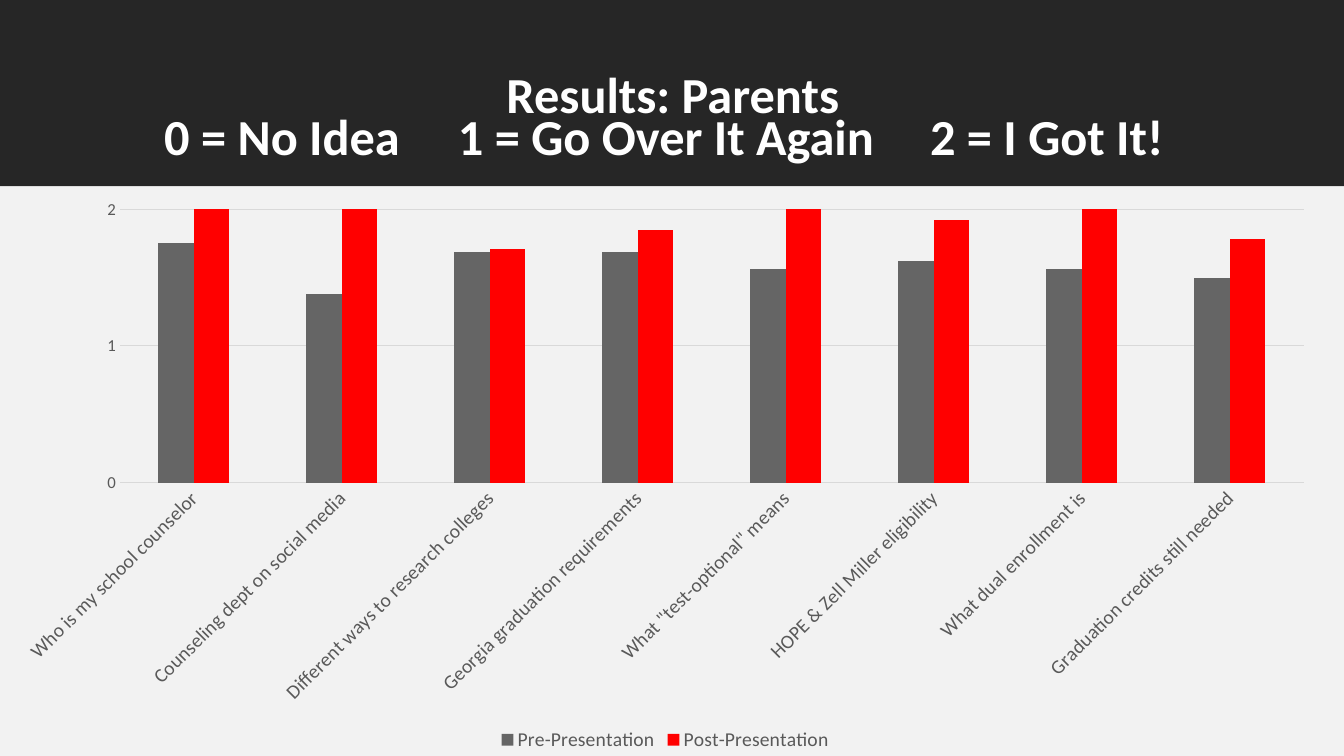
from dataclasses import dataclass

from lxml.etree import SubElement
from pptx import Presentation
from pptx.chart.chart import Chart
from pptx.chart.data import CategoryChartData
from pptx.dml.color import RGBColor
from pptx.enum.chart import XL_CHART_TYPE, XL_LEGEND_POSITION, XL_TICK_MARK
from pptx.enum.shapes import MSO_SHAPE
from pptx.enum.text import MSO_ANCHOR, PP_ALIGN
from pptx.oxml import parse_xml
from pptx.oxml.ns import nsdecls, qn
from pptx.slide import Slide
from pptx.text.text import Font
from pptx.util import Cm, Length, Pt

CHARCOAL = RGBColor(0x26, 0x26, 0x26)
PALE_GRAY = RGBColor(0xF2, 0xF2, 0xF2)
WHITE = RGBColor(0xFF, 0xFF, 0xFF)
LABEL_GRAY = RGBColor(0x59, 0x59, 0x59)
GRID_GRAY = RGBColor(0xD9, 0xD9, 0xD9)
BAR_GRAY = RGBColor(0x65, 0x65, 0x65)
BAR_RED = RGBColor(0xFF, 0x00, 0x00)

FONT_NAME = "Calibri"
SLIDE_WIDTH = Cm(33.87)
SLIDE_HEIGHT = Cm(19.05)
HEADER_HEIGHT = Cm(4.7)


@dataclass(frozen=True)
class Band:
    top: Length
    height: Length
    color: RGBColor


@dataclass(frozen=True)
class Survey:
    name: str
    scores: tuple[float, ...]
    color: RGBColor


BANDS = (
    Band(Cm(0), HEADER_HEIGHT, CHARCOAL),
    Band(HEADER_HEIGHT, Cm(14.48), PALE_GRAY),
)
QUESTIONS = (
    "Who is my school counselor",
    "Counseling dept on social media",
    "Different ways to research colleges",
    "Georgia graduation requirements",
    'What "test-optional" means',
    "HOPE & Zell Miller eligibility",
    "What dual enrollment is",
    "Graduation credits still needed",
)
SURVEYS = (
    Survey("Pre-Presentation", (1.75, 1.38, 1.69, 1.69, 1.56, 1.62, 1.56, 1.5), BAR_GRAY),
    Survey("Post-Presentation", (2, 2, 1.71, 1.85, 2, 1.92, 2, 1.78), BAR_RED),
)
SCALE = ("0 = No Idea", "1 = Go Over It Again", "2 = I Got It!")
SCALE_STOPS = (Cm(7.4), Cm(19.3))
PLOT_AREA = {"x": 0.09, "y": 0.04, "w": 0.89, "h": 0.48}


def style_font(font: Font, size: float, color: RGBColor, bold: bool = False) -> None:
    font.name = FONT_NAME
    font.size = Pt(size)
    font.bold = bold
    font.color.rgb = color


def draw_band(slide: Slide, band: Band) -> None:
    strip = slide.shapes.add_shape(
        MSO_SHAPE.RECTANGLE, Cm(0), band.top, SLIDE_WIDTH, band.height
    )
    strip.shadow.inherit = False
    strip.fill.solid()
    strip.fill.fore_color.rgb = band.color
    strip.line.fill.background()


def draw_heading(slide: Slide) -> None:
    heading = slide.shapes.add_textbox(Cm(3.23), Cm(1.78), Cm(27.46), Cm(2.49)).text_frame
    heading.word_wrap = True
    heading.vertical_anchor = MSO_ANCHOR.BOTTOM
    heading.margin_left = heading.margin_right = Cm(0.91)
    title, scale = heading.paragraphs[0], heading.add_paragraph()
    title.text = "Results: Parents"
    title.alignment = PP_ALIGN.CENTER
    scale.text = "\t".join(SCALE)
    scale.alignment = PP_ALIGN.LEFT
    for line in (title, scale):
        line.line_spacing = 0.7
        style_font(line.font, 36, WHITE, bold=True)
    properties = scale._p.get_or_add_pPr()
    stops = SubElement(properties, qn("a:tabLst"))
    for position in SCALE_STOPS:
        SubElement(stops, qn("a:tab"), pos=str(position), algn="l")
    properties.find(qn("a:defRPr")).addprevious(stops)


def place_plot(chart: Chart) -> None:
    plot_area = chart._chartSpace.chart.plotArea
    for old_layout in plot_area.findall(qn("c:layout")):
        plot_area.remove(old_layout)
    modes = '<c:xMode val="edge"/><c:yMode val="edge"/>'
    sizes = "".join(f'<c:{key} val="{share}"/>' for key, share in PLOT_AREA.items())
    layout = parse_xml(
        f'<c:layout {nsdecls("c")}><c:manualLayout>'
        f'<c:layoutTarget val="inner"/>{modes}{sizes}'
        "</c:manualLayout></c:layout>"
    )
    plot_area.insert(0, layout)


def style_axes(chart: Chart) -> None:
    questions, scores = chart.category_axis, chart.value_axis
    for axis, size in ((questions, 14), (scores, 12)):
        axis.major_tick_mark = axis.minor_tick_mark = XL_TICK_MARK.NONE
        style_font(axis.tick_labels.font, size, LABEL_GRAY)
    questions._element.txPr.bodyPr.set("rot", "-2700000")
    scores.minimum_scale, scores.maximum_scale, scores.major_unit = 0, 2, 1
    scores.format.line.fill.background()
    for line in (questions.format.line, scores.major_gridlines.format.line):
        line.color.rgb = GRID_GRAY
        line.width = Pt(0.75)


def draw_results(slide: Slide) -> None:
    results = CategoryChartData()
    results.categories = QUESTIONS
    for survey in SURVEYS:
        results.add_series(survey.name, survey.scores)
    chart = slide.shapes.add_chart(
        XL_CHART_TYPE.COLUMN_CLUSTERED,
        Cm(0), HEADER_HEIGHT, Cm(33.53), SLIDE_HEIGHT - HEADER_HEIGHT, results,
    ).chart
    chart.font.name = FONT_NAME
    chart.font.size = Pt(10)
    chart.has_title = False
    chart.has_legend = True
    chart.legend.position = XL_LEGEND_POSITION.BOTTOM
    chart.legend.include_in_layout = False
    style_font(chart.legend.font, 14, LABEL_GRAY)
    bars = chart.plots[0]
    bars.gap_width = 219
    bars.overlap = 0
    bars.vary_by_categories = False
    for series, survey in zip(bars.series, SURVEYS):
        series.format.fill.solid()
        series.format.fill.fore_color.rgb = survey.color
    style_axes(chart)
    place_plot(chart)


def main() -> None:
    presentation = Presentation()
    presentation.slide_width = SLIDE_WIDTH
    presentation.slide_height = SLIDE_HEIGHT
    slide = presentation.slides.add_slide(presentation.slide_layouts[6])
    for band in BANDS:
        draw_band(slide, band)
    draw_results(slide)
    draw_heading(slide)
    presentation.save("out.pptx")


if __name__ == "__main__":
    main()
